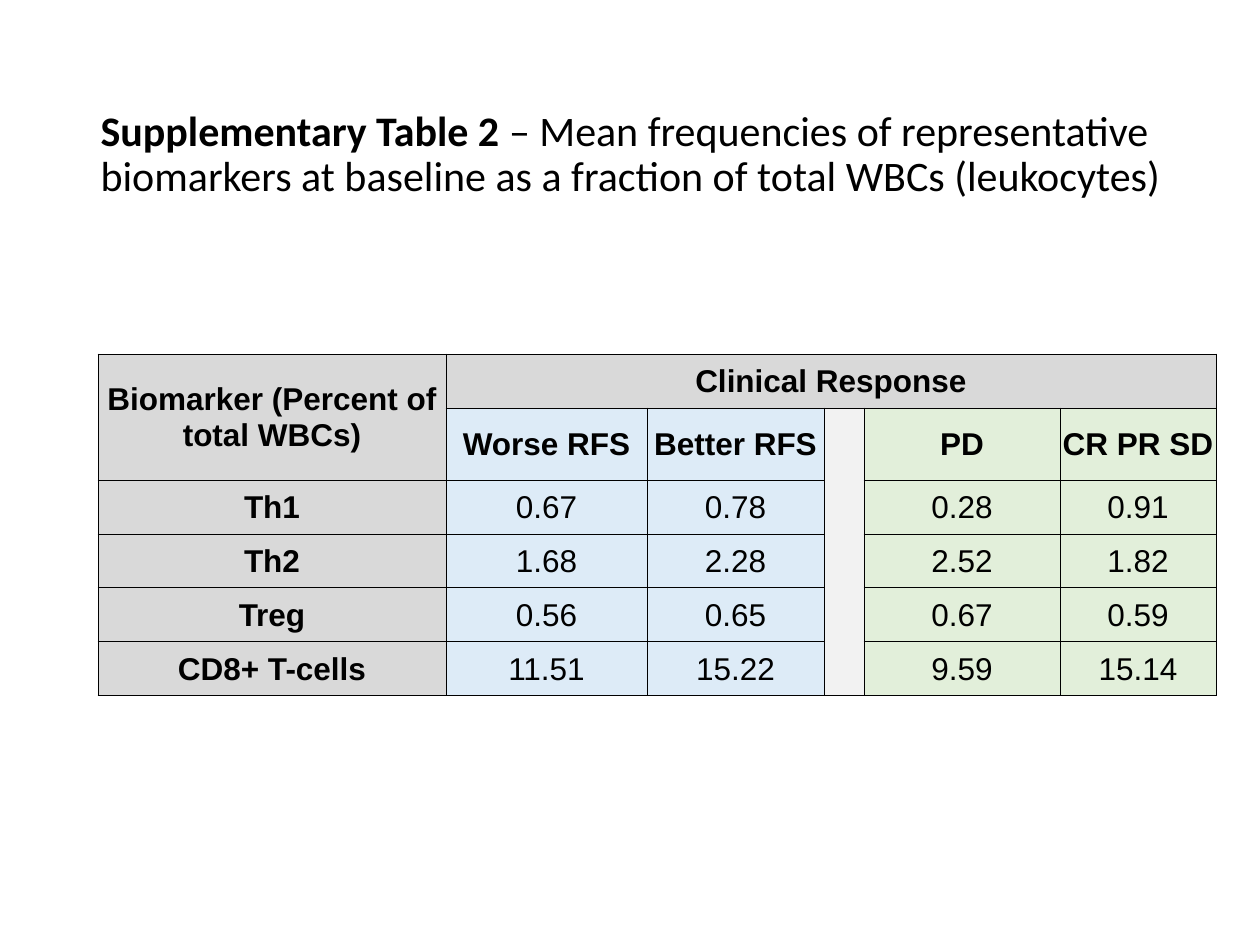
from lxml import etree
from pptx import Presentation
from pptx.dml.color import RGBColor
from pptx.enum.text import MSO_ANCHOR, MSO_AUTO_SIZE, PP_ALIGN
from pptx.oxml.ns import qn
from pptx.util import Emu, Pt

MIDDLE = MSO_ANCHOR.MIDDLE
NO_AUTOFIT = MSO_AUTO_SIZE.NONE
LEFT, CENTER = PP_ALIGN.LEFT, PP_ALIGN.CENTER

PX_PER_INCH = 126
TITLE_ONLY = 5
COLORS = {
    "text": "000000",
    "border": "000000",
    "header": "D9D9D9",
    "survival": "DDEBF7",
    "gap": "F2F2F2",
    "response": "E2EFDA",
}
COLUMN_FILLS = ["header", "survival", "survival", "gap", "response", "response"]
COLUMN_WIDTHS = [348, 201, 177, 40, 196, 156]
ROW_HEIGHTS = [54, 72, 54, 54, 54, 54]
HEADER_ROWS = 2
ROWS = [
    ["Biomarker (Percent of total WBCs)", "Clinical Response", "", "", "", ""],
    ["", "Worse RFS", "Better RFS", "", "PD", "CR PR SD"],
    ["Th1", "0.67", "0.78", "", "0.28", "0.91"],
    ["Th2", "1.68", "2.28", "", "2.52", "1.82"],
    ["Treg", "0.56", "0.65", "", "0.67", "0.59"],
    ["CD8+ T-cells", "11.51", "15.22", "", "9.59", "15.14"],
]
MERGES = [((0, 0), (1, 0)), ((0, 1), (0, 5)), ((1, 3), (5, 3))]


def px(length):
    return Emu(round(length * 914400 / PX_PER_INCH))


def apply_format(target, values):
    for name, value in values.items():
        setattr(target, name, value)


class SlideBuilder:
    title_font = {"name": "Calibri", "size": Pt(24)}
    table_font = {"name": "Arial", "size": Pt(18)}
    cell_format = {
        "margin_left": px(1),
        "margin_right": px(1),
        "margin_top": px(1),
        "margin_bottom": 0,
        "vertical_anchor": MIDDLE,
    }

    def __init__(self, slide):
        self.slide = slide

    def style_font(self, font, values, bold):
        apply_format(font, {**values, "bold": bold})
        font.color.rgb = RGBColor.from_string(COLORS["text"])

    def title(self, left, top, width, height, parts):
        title = self.slide.shapes.title
        box = {"left": left, "top": top, "width": width, "height": height}
        apply_format(title, {name: px(value) for name, value in box.items()})
        frame = title.text_frame
        apply_format(frame, {"word_wrap": True, "auto_size": NO_AUTOFIT,
                             "vertical_anchor": MIDDLE})
        paragraph = frame.paragraphs[0]
        apply_format(paragraph, {"alignment": LEFT, "line_spacing": 0.9})
        for text, bold in parts:
            run = paragraph.add_run()
            run.text = text
            self.style_font(run.font, self.title_font, bold)

    def border(self, cell):
        properties = cell._tc.get_or_add_tcPr()
        for index, side in enumerate(("a:lnL", "a:lnR", "a:lnT", "a:lnB")):
            line = etree.Element(qn(side), w=str(Pt(0.5)))
            fill = etree.SubElement(line, qn("a:solidFill"))
            etree.SubElement(fill, qn("a:srgbClr"), val=COLORS["border"])
            properties.insert(index, line)

    def cell(self, cell, text, fill, bold):
        apply_format(cell, self.cell_format)
        cell.fill.solid()
        cell.fill.fore_color.rgb = RGBColor.from_string(COLORS[fill])
        self.border(cell)
        paragraph = cell.text_frame.paragraphs[0]
        paragraph.alignment = CENTER
        self.style_font(paragraph.font, self.table_font, bold)
        if text:
            run = paragraph.add_run()
            run.text = text
            self.style_font(run.font, self.table_font, bold)

    def table(self, left, top):
        shape = self.slide.shapes.add_table(
            len(ROWS), len(COLUMN_WIDTHS), px(left), px(top),
            px(sum(COLUMN_WIDTHS)), px(sum(ROW_HEIGHTS)))
        table = shape.table
        apply_format(table, {"first_row": False, "horz_banding": False})
        for column, width in zip(table.columns, COLUMN_WIDTHS):
            column.width = px(width)
        for row, height in zip(table.rows, ROW_HEIGHTS):
            row.height = px(height)
        for row_index, texts in enumerate(ROWS):
            for column_index, text in enumerate(texts):
                fill = COLUMN_FILLS[column_index] if row_index else "header"
                bold = row_index < HEADER_ROWS or column_index == 0
                self.cell(table.cell(row_index, column_index), text, fill, bold)
        for first, last in MERGES:
            table.cell(*first).merge(table.cell(*last))


def main():
    presentation = Presentation()
    apply_format(presentation, {"slide_width": px(1260), "slide_height": px(945)})
    slide = presentation.slides.add_slide(presentation.slide_layouts[TITLE_ONLY])
    builder = SlideBuilder(slide)
    builder.title(88, 64, 1086, 183, [
        ("Supplementary Table 2 ", True),
        ("– Mean frequencies of representative biomarkers at baseline "
         "as a fraction of total WBCs (leukocytes)", False),
    ])
    builder.table(98, 354)
    presentation.save("out.pptx")


if __name__ == "__main__":
    main()
